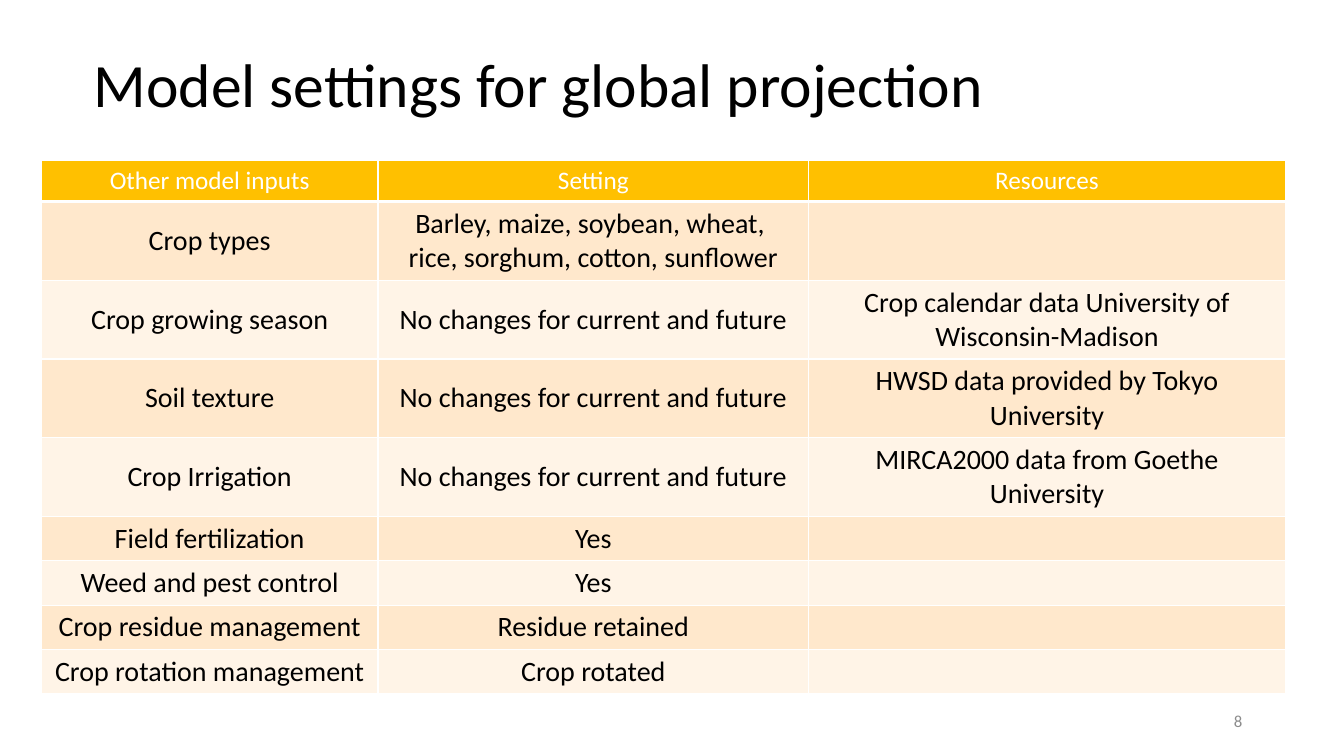
from dataclasses import dataclass

from lxml.etree import SubElement
from pptx import Presentation
from pptx.dml.color import RGBColor
from pptx.enum.text import MSO_ANCHOR, PP_ALIGN
from pptx.oxml.ns import qn
from pptx.util import Inches, Pt


@dataclass(frozen=True)
class Theme:
    font: str = "Calibri"
    text: str = "000000"
    header_text: str = "FFFFFF"
    header_fill: str = "FFC000"
    bands: tuple = ("FFE8CC", "FFF4E7")
    border: str = "FFFFFF"
    number: str = "8C8C8C"
    title_size: int = 44
    header_size: int = 18
    body_size: int = 20
    number_size: int = 12


theme = Theme()


def write_lines(text_frame, text, size, color, alignment):
    """Write each line of text as a paragraph holding one styled run."""
    for index, line in enumerate(text.split("\n")):
        paragraph = text_frame.paragraphs[0] if index == 0 else text_frame.add_paragraph()
        paragraph.alignment = alignment
        run = paragraph.add_run()
        run.text = line
        run.font.name = theme.font
        run.font.size = Pt(size)
        run.font.bold = False
        run.font.color.rgb = RGBColor.from_string(color)


def add_borders(cell, bottom_width):
    properties = cell._tc.get_or_add_tcPr()
    for side, width in (("L", 1), ("R", 1), ("T", 1), ("B", bottom_width)):
        line = SubElement(properties, qn(f"a:ln{side}"), w=str(Pt(width)))
        fill = SubElement(line, qn("a:solidFill"))
        SubElement(fill, qn("a:srgbClr"), val=theme.border)


presentation = Presentation()
presentation.slide_width = Inches(13.33)
presentation.slide_height = Inches(7.5)
slide = presentation.slides.add_slide(presentation.slide_layouts[6])

# Settings table
unchanged = "No changes for current and future"
settings = [
    ("Other model inputs", "Setting", "Resources"),
    ("Crop types", "Barley, maize, soybean, wheat, \nrice, sorghum, cotton, sunflower", ""),
    ("Crop growing season", unchanged, "Crop calendar data University of Wisconsin-Madison"),
    ("Soil texture", unchanged, "HWSD data provided by Tokyo University"),
    ("Crop Irrigation", unchanged, "MIRCA2000 data from Goethe University"),
    ("Field fertilization", "Yes", ""),
    ("Weed and pest control", "Yes", ""),
    ("Crop residue management", "Residue retained", ""),
    ("Crop rotation management", "Crop rotated", ""),
]
column_widths = [3.34, 4.27, 4.73]
row_heights = [0.41] + [0.78] * 4 + [0.44] * 4

table = slide.shapes.add_table(
    len(settings), len(column_widths), Inches(0.41), Inches(1.59),
    Inches(sum(column_widths)), Inches(sum(row_heights)),
).table
for column, width in zip(table.columns, column_widths):
    column.width = Inches(width)

for row_index, (values, height) in enumerate(zip(settings, row_heights)):
    table.rows[row_index].height = Inches(height)
    is_header = row_index == 0
    fill_color = theme.header_fill if is_header else theme.bands[(row_index - 1) % 2]
    text_color = theme.header_text if is_header else theme.text
    text_size = theme.header_size if is_header else theme.body_size
    for column_index, value in enumerate(values):
        cell = table.cell(row_index, column_index)
        add_borders(cell, 3 if is_header else 1)
        cell.fill.solid()
        cell.fill.fore_color.rgb = RGBColor.from_string(fill_color)
        cell.vertical_anchor = MSO_ANCHOR.TOP if is_header else MSO_ANCHOR.MIDDLE
        if value:
            write_lines(cell.text_frame, value, text_size, text_color, PP_ALIGN.CENTER)

# Title and slide number
labels = [
    ("Model settings for global projection", (0.83, 0.41, 11.5, 0.91),
     theme.title_size, theme.text, PP_ALIGN.LEFT, 0.9),
    ("8", (9.42, 6.95, 3, 0.4),
     theme.number_size, theme.number, PP_ALIGN.RIGHT, 1.0),
]
for text, box, size, color, alignment, line_spacing in labels:
    text_frame = slide.shapes.add_textbox(*map(Inches, box)).text_frame
    text_frame.word_wrap = True
    text_frame.vertical_anchor = MSO_ANCHOR.MIDDLE
    write_lines(text_frame, text, size, color, alignment)
    text_frame.paragraphs[0].line_spacing = line_spacing

presentation.save("out.pptx")
